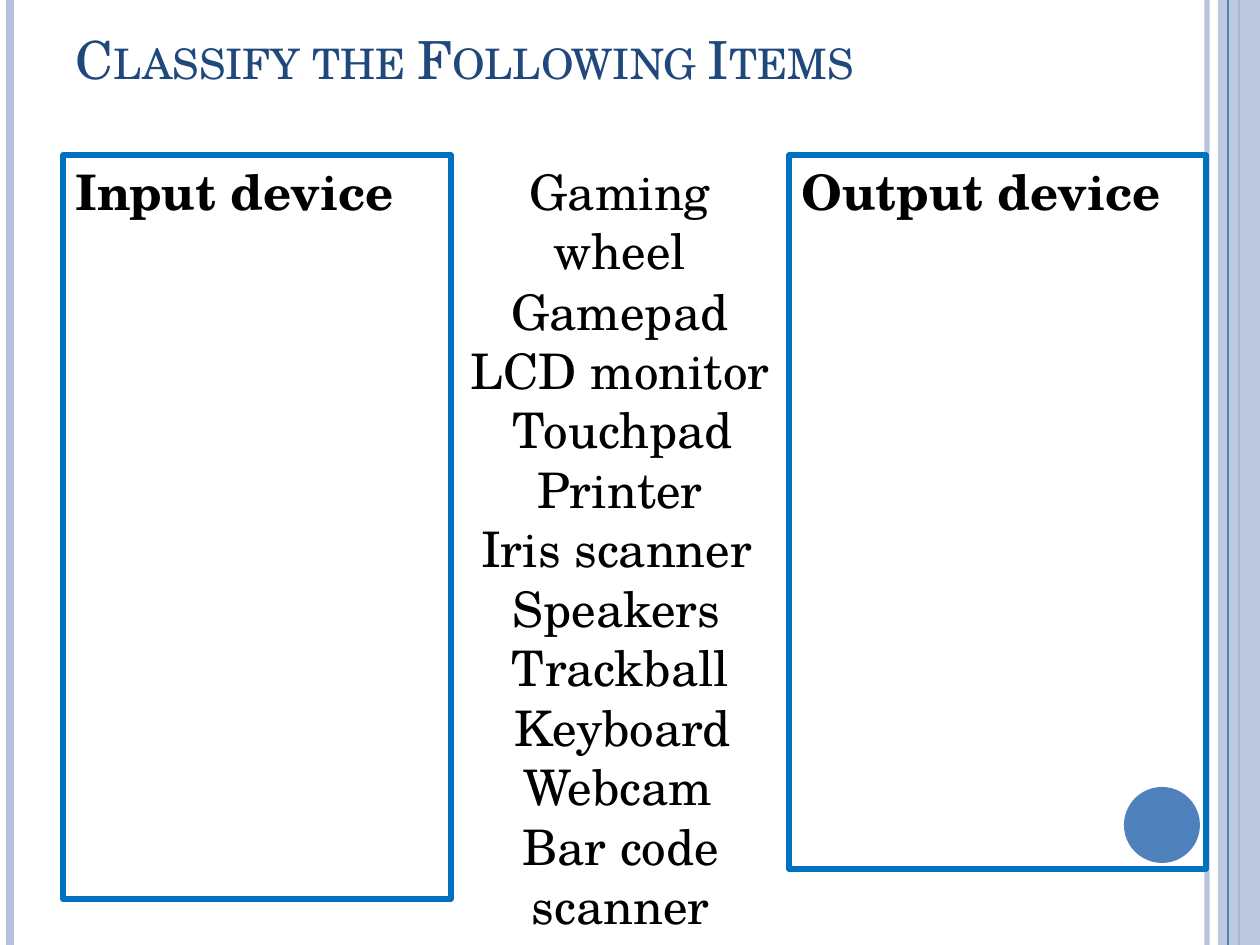
from dataclasses import dataclass

from pptx import Presentation
from pptx.dml.color import RGBColor
from pptx.enum.shapes import MSO_CONNECTOR as Connector, MSO_SHAPE as Shape
from pptx.enum.text import MSO_ANCHOR as Anchor, MSO_AUTO_SIZE as AutoSize, PP_ALIGN as Align
from pptx.oxml.ns import qn
from pptx.util import Emu, Pt
from lxml.etree import SubElement


@dataclass(frozen=True)
class Theme:
    font: str = "TeX Gyre Schola"
    title_size: int = 30
    body_size: int = 28
    title: str = "1F497D"
    text: str = "000000"
    accent: str = "4F81BD"
    pale: str = "B3C1DB"
    frame: str = "0070C0"


THEME = Theme()
WIDTH, HEIGHT = 1260, 945
ITEM_TOP, ITEM_SPAN, ITEM_HEIGHT = 275, 535, 72

FIRST_ITEM = ("Gaming wheel", 451, 338)
ITEMS = [
    ("Gamepad", 451, 338),
    ("LCD monitor", 451, 338),
    ("Touchpad", 456, 333),
    ("Printer", 456, 328),
    ("Iris scanner", 451, 331),
    ("Speakers", 451, 331),
    ("Trackball", 454, 333),
    ("Keyboard", 459, 328),
    ("Webcam", 451, 333),
    ("Bar code scanner", 422, 397),
]


def px(value):
    return Emu(round(value * 914400 / 126))


def apply_format(target, values):
    for name, value in values.items():
        setattr(target, name, value)


def set_opacity(properties, percent):
    color = properties.find(".//" + qn("a:srgbClr"))
    SubElement(color, qn("a:alpha")).set("val", str(percent * 1000))


class SlideBuilder:
    def __init__(self, slide, theme):
        self.slide = slide
        self.theme = theme

    def add_text(self, shape, text, size, color, frame, paragraph_format, bold=False):
        apply_format(shape.text_frame, {"word_wrap": True, **frame})
        paragraph = shape.text_frame.paragraphs[0]
        apply_format(paragraph, paragraph_format)
        run = paragraph.add_run()
        run.text = text
        apply_format(run.font, {"name": self.theme.font, "size": Pt(size), "bold": bold})
        run.font.color.rgb = RGBColor.from_string(color)
        return run

    def rule(self, x, color, width, opacity=100):
        line = self.slide.shapes.add_connector(
            Connector.STRAIGHT, px(x), px(0), px(x), px(HEIGHT))
        line.line.color.rgb = RGBColor.from_string(color)
        line.line.width = Pt(width)
        properties = line._element.spPr
        SubElement(properties, qn("a:effectLst"))
        if opacity < 100:
            set_opacity(properties, opacity)

    def block(self, kind, left, top, width, height, color, opacity=100):
        shape = self.slide.shapes.add_shape(kind, px(left), px(top), px(width), px(height))
        shape.shadow.inherit = False
        shape.fill.solid()
        shape.fill.fore_color.rgb = RGBColor.from_string(color)
        shape.line.fill.background()
        if opacity < 100:
            set_opacity(shape._element.spPr, opacity)

    def title(self, text, left, top, width, height):
        box = self.slide.shapes.add_textbox(px(left), px(top), px(width), px(height))
        run = self.add_text(box, text, self.theme.title_size, self.theme.title,
                            {"vertical_anchor": Anchor.BOTTOM}, {"alignment": Align.LEFT})
        run._r.get_or_add_rPr().set("cap", "small")

    def frame(self, heading, left, top, width, height):
        shape = self.slide.shapes.add_shape(
            Shape.RECTANGLE, px(left), px(top), px(width), px(height))
        shape.shadow.inherit = False
        shape.fill.background()
        shape.line.color.rgb = RGBColor.from_string(self.theme.frame)
        shape.line.width = Pt(3)
        self.add_text(shape, heading, self.theme.body_size, self.theme.text,
                      {"vertical_anchor": Anchor.TOP},
                      {"alignment": Align.LEFT, "space_before": Pt(6)}, bold=True)

    def item(self, text, left, top, width, height):
        box = self.slide.shapes.add_textbox(px(left), px(top), px(width), px(height))
        self.add_text(box, text, self.theme.body_size, self.theme.text,
                      {"auto_size": AutoSize.SHAPE_TO_FIT_TEXT}, {"alignment": Align.CENTER})


def main():
    presentation = Presentation()
    apply_format(presentation, {"slide_width": px(WIDTH), "slide_height": px(HEIGHT)})
    slide = presentation.slides.add_slide(presentation.slide_layouts[6])
    builder = SlideBuilder(slide, THEME)

    builder.rule(1207, THEME.pale, 3, opacity=93)
    builder.rule(10, THEME.pale, 4.5)
    builder.rule(1239, THEME.accent, 1.5)
    builder.block(Shape.RECTANGLE, 1218, 0, 42, HEIGHT, THEME.pale, opacity=87)
    builder.rule(1228, THEME.accent, 0.75)
    builder.block(Shape.OVAL, 1124, 787, 76, 76, THEME.accent)

    builder.title("Classify the Following Items", 63, 6, 1029, 90)
    builder.frame("Input device", 63, 155, 388, 744)
    builder.frame("Output device", 789, 155, 417, 714)

    text, left, width = FIRST_ITEM
    builder.item(text, left, 155, width, 131)
    for index, (text, left, width) in enumerate(ITEMS):
        top = ITEM_TOP + index * ITEM_SPAN // (len(ITEMS) - 1)
        builder.item(text, left, top, width, ITEM_HEIGHT)

    presentation.save("out.pptx")


if __name__ == "__main__":
    main()
